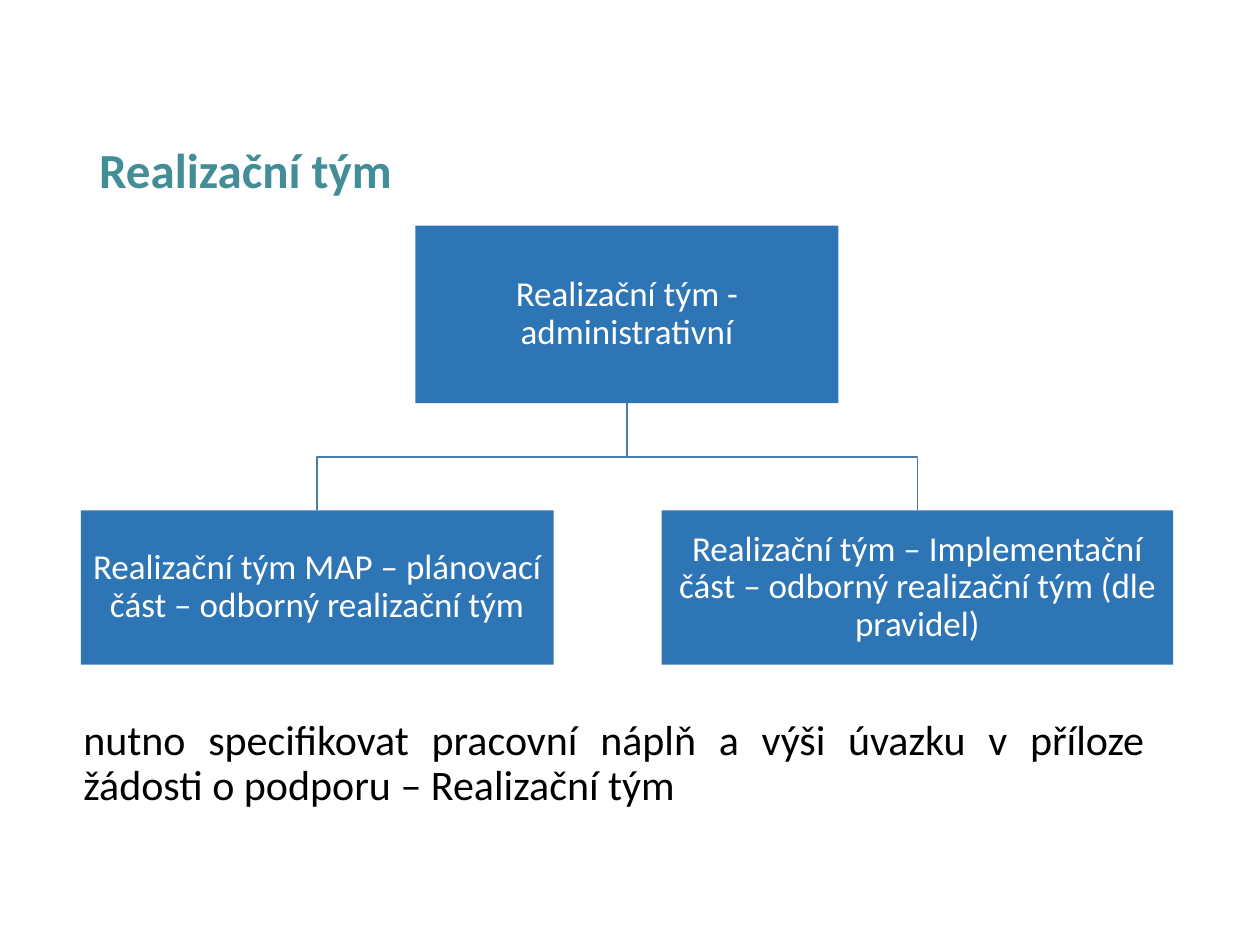
import pptx
import pptx.util
import pptx.dml.color
import pptx.enum.shapes
import pptx.enum.text

Cm = pptx.util.Cm
ALIGN = pptx.enum.text.PP_ALIGN
FONT = "Calibri"
TEAL, BLUE, LINE_BLUE = "428D96", "2E75B6", "497CAB"
WHITE, BLACK = "FFFFFF", "000000"


def color(value):
    return pptx.dml.color.RGBColor.from_string(value)


def write_text(shape, text, size, font_color, align=ALIGN.LEFT, bold=False, margin=None):
    frame = shape.text_frame
    frame.word_wrap = True
    frame.vertical_anchor = pptx.enum.text.MSO_ANCHOR.MIDDLE
    if margin is not None:
        frame.margin_left = frame.margin_right = margin
        frame.margin_top = frame.margin_bottom = margin
    paragraph = frame.paragraphs[0]
    paragraph.alignment = align
    paragraph.line_spacing = 0.9
    run = paragraph.add_run()
    run.text = text
    run.font.name = FONT
    run.font.size = pptx.util.Pt(size)
    run.font.bold = bold
    run.font.color.rgb = color(font_color)


def add_heading(slide, left, top, width, height):
    shape = slide.shapes.add_textbox(left, top, width, height)
    write_text(shape, "Realizační tým", 28, TEAL, bold=True)


def add_note(slide, left, top, width, height):
    shape = slide.shapes.add_textbox(left, top, width, height)
    write_text(
        shape,
        "nutno specifikovat pracovní náplň a výši úvazku v příloze "
        "žádosti o podporu – Realizační tým",
        24, BLACK, align=ALIGN.JUSTIFY)


def add_team_box(slide, text, left, top, width, height):
    shape = slide.shapes.add_shape(
        pptx.enum.shapes.MSO_SHAPE.RECTANGLE, left, top, width, height)
    shape.shadow.inherit = False
    shape.fill.solid()
    shape.fill.fore_color.rgb = color(BLUE)
    shape.line.fill.background()
    write_text(shape, text, 20, WHITE, align=ALIGN.CENTER, margin=Cm(0.03))
    return shape


def add_branch(slide, parent, child):
    """Draw an elbow line from the parent's bottom to the child's top."""
    start_x = parent.left + parent.width // 2
    start_y = parent.top + parent.height
    end_x = child.left + child.width // 2
    middle_y = (start_y + child.top) // 2
    builder = slide.shapes.build_freeform(start_x, start_y)
    builder.add_line_segments(
        [(start_x, middle_y), (end_x, middle_y), (end_x, child.top)], close=False)
    shape = builder.convert_to_shape()
    shape.shadow.inherit = False
    shape.fill.background()
    shape.line.color.rgb = color(LINE_BLUE)
    shape.line.width = pptx.util.Pt(1)


def add_team_chart(slide, left, top, width, height):
    # Administrative team, centred at the top
    parent_width, parent_height = Cm(8.53), Cm(3.58)
    parent = add_team_box(
        slide, "Realizační tým - administrativní",
        left + (width - parent_width) // 2, top, parent_width, parent_height)

    # Expert teams, at the bottom left and right
    child_height = Cm(3.11)
    child_top = top + height - child_height
    left_width, right_width = Cm(9.53), Cm(10.31)
    children = [
        add_team_box(
            slide, "Realizační tým MAP – plánovací část – odborný realizační tým",
            left, child_top, left_width, child_height),
        add_team_box(
            slide,
            "Realizační tým – Implementační část – odborný realizační tým (dle pravidel)",
            left + width - right_width, child_top, right_width, child_height),
    ]
    for child in children:
        add_branch(slide, parent, child)


def main():
    presentation = pptx.Presentation()
    presentation.slide_width, presentation.slide_height = Cm(25.4), Cm(19.05)
    slide = presentation.slides.add_slide(presentation.slide_layouts[6])
    add_heading(slide, Cm(1.75), Cm(2.24), Cm(21.9), Cm(2.49))
    add_team_chart(slide, Cm(1.63), Cm(4.55), Cm(22.02), Cm(8.85))
    add_note(slide, Cm(1.43), Cm(14.17), Cm(21.9), Cm(2.49))
    presentation.save("out.pptx")


if __name__ == "__main__":
    main()
